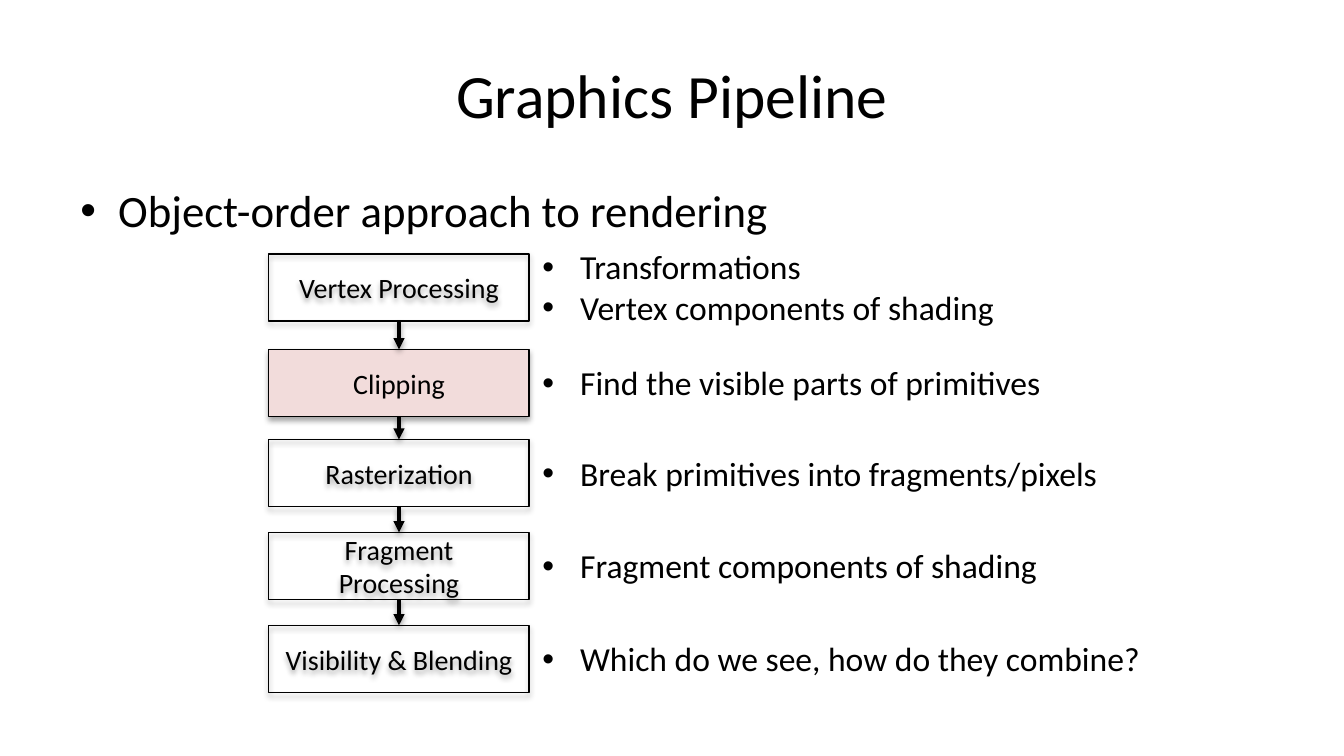
from itertools import pairwise
from lxml.etree import SubElement as Sub
from pptx import Presentation
from pptx.dml.color import RGBColor as Rgb
from pptx.enum.shapes import MSO_CONNECTOR as Conn, MSO_SHAPE as Kind
from pptx.enum.text import MSO_ANCHOR as Anchor, MSO_AUTO_SIZE as Fit, PP_ALIGN as Align
from pptx.oxml.ns import qn
from pptx.util import Pt

TITLE = "Graphics Pipeline"
LEAD = "Object-order approach to rendering"
STAGES = [
    ("Vertex Processing", 136, None, ["Transformations", "Vertex components of shading"]),
    ("Clipping", 187.2, "rose", ["Find the visible parts of primitives"]),
    ("Rasterization", 235.5, None, ["Break primitives into fragments/pixels"]),
    ("Fragment Processing", 285.2, None, ["Fragment components of shading"]),
    ("Visibility & Blending", 335, None, ["Which do we see, how do they combine?"]),
]
COLORS = {"ink": "000000", "rose": "F2DCDB"}
FONT = "Calibri"
LEFT, WIDE, HIGH = 144, 139.5, 36
NOTE_WIDE, LINE, PAD = 346, 22, 7.2


def color(name):
    return Rgb.from_string(COLORS[name])


def style(para, size):
    para.font.name = FONT
    para.font.size = Pt(size)
    para.font.color.rgb = color("ink")


def shade(shape, alpha, dist):
    props = shape._element.spPr
    drop = Sub(Sub(props, qn("a:effectLst")), qn("a:outerShdw"), blurRad=str(Pt(3.1)),
               dist=str(Pt(dist)), dir="5400000", rotWithShape="0")
    tint = Sub(drop, qn("a:srgbClr"), val=COLORS["ink"])
    Sub(tint, qn("a:alpha"), val=str(alpha * 1000))


def add_list(slide, items, size, left, top, wide, high):
    frame = slide.shapes.add_textbox(Pt(left), Pt(top), Pt(wide), Pt(high)).text_frame
    frame.word_wrap = True
    frame.text = "\n".join(items)
    for para in frame.paragraphs:
        props = para._p.get_or_add_pPr()
        props.set("marL", str(Pt(20.25)))
        props.set("indent", str(Pt(-20.25)))
        Sub(props, qn("a:buFont"), typeface="Arial")
        Sub(props, qn("a:buChar"), char="•")
        style(para, size)


def add_stage(slide, name, top, fill):
    box = slide.shapes.add_shape(Kind.RECTANGLE, Pt(LEFT), Pt(top), Pt(WIDE), Pt(HIGH))
    if fill:
        box.fill.solid()
        box.fill.fore_color.rgb = color(fill)
    else:
        box.fill.background()
    box.line.color.rgb = color("ink")
    box.line.width = Pt(0.75)
    shade(box, 35, 1.8)
    frame = box.text_frame
    frame.word_wrap = True
    frame.vertical_anchor = Anchor.MIDDLE
    frame.text = name
    para = frame.paragraphs[0]
    para.alignment = Align.CENTER
    style(para, 15)
    return box


def add_arrow(slide, start, end):
    arrow = slide.shapes.add_connector(Conn.STRAIGHT, 0, 0, 0, 0)
    arrow.begin_connect(start, 2)
    arrow.end_connect(end, 0)
    arrow.line.color.rgb = color("ink")
    arrow.line.width = Pt(2)
    Sub(arrow._element.spPr.find(qn("a:ln")), qn("a:tailEnd"), type="triangle")
    shade(arrow, 38, 1.6)


def main():
    """Build the graphics pipeline slide."""
    deck = Presentation()
    deck.slide_width, deck.slide_height = Pt(720), Pt(405)
    slide = deck.slides.add_slide(deck.slide_layouts[5])

    title = slide.shapes.title
    title.left, title.top, title.width, title.height = Pt(36), Pt(16.5), Pt(648), Pt(67.5)
    frame = title.text_frame
    frame.text = TITLE
    frame.auto_size = Fit.NONE
    frame.vertical_anchor = Anchor.MIDDLE
    frame.paragraphs[0].alignment = Align.CENTER
    style(frame.paragraphs[0], 33)

    add_list(slide, [LEAD], 24, 36, 94.5, 648, 267)
    boxes = [add_stage(slide, name, top, fill) for name, top, fill, _ in STAGES]
    for start, end in pairwise(boxes):
        add_arrow(slide, start, end)
    for _, top, _, notes in STAGES:
        high = LINE * len(notes) + PAD
        add_list(slide, notes, 18, LEFT + WIDE, top + (HIGH - high) / 2, NOTE_WIDE, high)
    deck.save("out.pptx")


if __name__ == "__main__":
    main()
